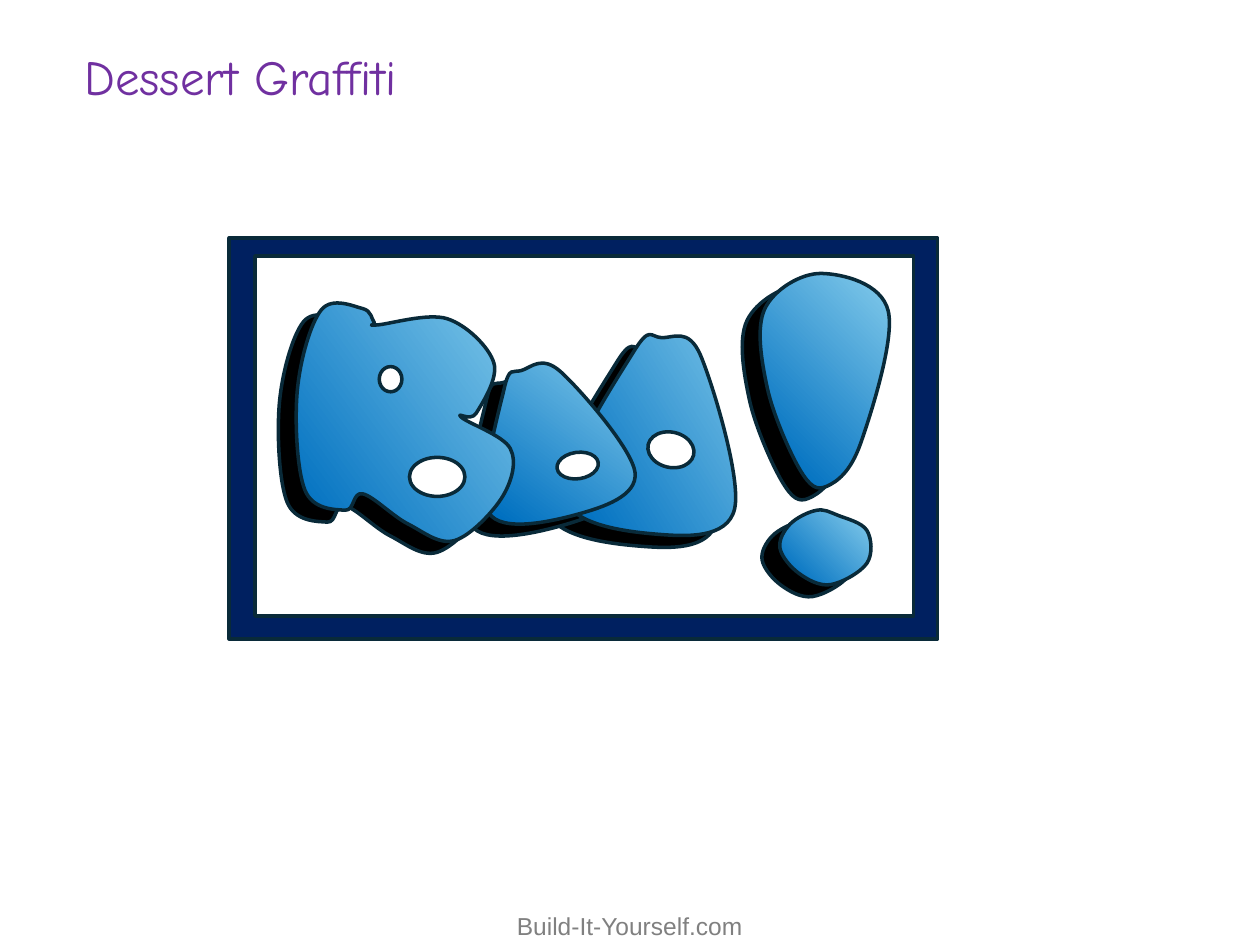
from math import cos, radians, sin

from lxml import etree
from pptx import Presentation
from pptx.dml.color import RGBColor
from pptx.enum.shapes import MSO_SHAPE
from pptx.enum.text import MSO_AUTO_SIZE, PP_ALIGN
from pptx.oxml.ns import qn
from pptx.util import Cm, Pt

RECTANGLE = MSO_SHAPE.RECTANGLE
OVAL = MSO_SHAPE.OVAL
CENTER = PP_ALIGN.CENTER
LEFT = PP_ALIGN.LEFT
FIT_TEXT = MSO_AUTO_SIZE.SHAPE_TO_FIT_TEXT

COLORS = {
    "navy": "002060", "white": "FFFFFF", "black": "000000", "outline": "092A39",
    "deep_blue": "0070C0", "sky_blue": "83CBEB", "purple": "7030A0", "gray": "808080",
}
UNITS_PER_CM = 100 / 2.54

LETTERS = [
    {
        "rotation": 13.1, "hole_rotation": 13.1, "holes": [(314, 143, 37, 28)],
        "anchors": [(303, 79), (325, 68), (356, 82), (383, 204), (322, 224), (248, 193)],
    },
    {
        "rotation": -7.9, "hole_rotation": -7.9, "holes": [(242, 159, 33, 21)],
        "anchors": [(200, 109), (214, 94), (245, 95), (304, 175), (259, 208), (188, 207)],
    },
    {
        "rotation": 8.7, "hole_rotation": 0,
        "holes": [(101, 91, 18, 20), (125, 163, 44, 31)],
        "anchors": [(97, 56), (88, 45), (55, 46), (36, 110), (42, 189), (74, 205),
                    (88, 192), (124, 216), (161, 229), (199, 194), (205, 156),
                    (166, 131), (178, 128), (192, 88), (155, 53), (99, 58)],
    },
    {
        "rotation": 0, "hole_rotation": 0, "holes": [],
        "anchors": [(435, 173), (409, 108), (407, 45), (452, 17), (505, 47),
                    (483, 152), (456, 186)],
    },
    {
        "rotation": 0, "hole_rotation": 0, "holes": [],
        "anchors": [(448, 205), (427, 216), (419, 235), (434, 255), (459, 264),
                    (488, 247), (488, 221), (465, 209)],
    },
]


def rgb(name):
    """Return a named colour."""
    return RGBColor.from_string(COLORS[name])


def paint(shape, color):
    """Fill and outline a shape, with the blue gradient when color is None."""
    shape.shadow.inherit = False
    shape.line.color.rgb = rgb("outline")
    shape.line.width = Pt(2)
    if color:
        shape.fill.solid()
        shape.fill.fore_color.rgb = rgb(color)
        return
    shape.fill.gradient()
    shape.fill.gradient_angle = 45
    stops = zip(shape.fill.gradient_stops, (0.1, 1), ("deep_blue", "sky_blue"))
    for stop, position, name in stops:
        stop.position = position
        stop.color.rgb = rgb(name)


def add_preset(shapes, preset, box, color, rotation=0):
    """Add a painted preset shape in a box given in centimetres."""
    shape = shapes.add_shape(preset, *map(Cm, box))
    shape.rotation = rotation
    paint(shape, color)


def turn(point, degrees):
    """Turn a point clockwise about the corner of the slide."""
    x, y = point
    cosine, sine = cos(radians(degrees)), sin(radians(degrees))
    return round(x * cosine - y * sine), round(x * sine + y * cosine)


def smooth_segments(points):
    """Return the cubic segments of a closed smooth curve through the points."""
    count = len(points)
    segments = []
    for i in range(count):
        before, start, end, after = (points[(i + step) % count] for step in (-1, 0, 1, 2))
        leaving = [s + (e - b) / 6 for b, s, e in zip(before, start, end)]
        arriving = [e - (a - s) / 6 for s, e, a in zip(start, end, after)]
        segments.append((leaving, arriving, end))
    return segments


def add_curve(shapes, letter, left, top, color):
    """Add a closed smooth outline, turned by the letter's rotation."""
    rotation = letter["rotation"]
    points = [turn((Cm(left + x / UNITS_PER_CM), Cm(top + y / UNITS_PER_CM)), -rotation)
              for x, y in letter["anchors"]]
    builder = shapes.build_freeform(*points[0])
    builder.add_line_segments(points[1:])
    shape = builder.convert_to_shape()
    corner_x, corner_y = shape.left, shape.top
    outline = shape.element.xpath(".//a:path")[0]
    for child in list(outline)[1:]:
        outline.remove(child)
    for segment in smooth_segments(points):
        curve = etree.SubElement(outline, qn("a:cubicBezTo"))
        for x, y in segment:
            etree.SubElement(curve, qn("a:pt"),
                             x=str(round(x - corner_x)), y=str(round(y - corner_y)))
    etree.SubElement(outline, qn("a:close"))
    half_width, half_height = shape.width // 2, shape.height // 2
    center_x, center_y = turn((corner_x + half_width, corner_y + half_height), rotation)
    shape.left, shape.top = center_x - half_width, center_y - half_height
    shape.rotation = rotation
    paint(shape, color)


def add_word(slide, left, top, letter_color, hole_color):
    """Add one layer of the graffiti word as a group."""
    shapes = slide.shapes.add_group_shape().shapes
    for letter in LETTERS:
        add_curve(shapes, letter, left, top, letter_color)
        for hole in letter["holes"]:
            x, y, width, height = (value / UNITS_PER_CM for value in hole)
            add_preset(shapes, OVAL, (left + x, top + y, width, height), hole_color,
                       letter["hole_rotation"])


def add_frame(slide, left, top, width, height):
    """Add the navy border and its white panel."""
    add_preset(slide.shapes, RECTANGLE, (left, top, width, height), "navy")
    panel = (left + 0.52, top + 0.36, width - 1, height - 0.82)
    add_preset(slide.shapes, RECTANGLE, panel, "white")


def add_text(slide, box, text, font, size, color, alignment, wrap):
    """Add a single line of text."""
    frame = slide.shapes.add_textbox(*map(Cm, box)).text_frame
    frame.word_wrap = wrap
    frame.auto_size = FIT_TEXT
    paragraph = frame.paragraphs[0]
    paragraph.alignment = alignment
    run = paragraph.add_run()
    run.text = text
    run.font.name = font
    run.font.size = Pt(size)
    run.font.color.rgb = rgb(color)


def main():
    """Build and save the slide."""
    presentation = Presentation()
    presentation.slide_width, presentation.slide_height = Cm(25.4), Cm(19.05)
    slide = presentation.slides.add_slide(presentation.slide_layouts[6])
    add_frame(slide, 4.62, 4.8, 14.28, 8.08)
    add_word(slide, 4.72, 5.32, "black", "black")
    add_word(slide, 5.08, 5.08, None, "white")
    add_text(slide, (10.13, 18.24, 5.13, 0.86), "Build-It-Yourself.com",
             "Arial", 14, "gray", CENTER, False)
    add_text(slide, (1.45, 0.81, 10.9, 1.45), "Dessert Graffiti",
             "Comic Neue", 28, "purple", LEFT, True)
    presentation.save("out.pptx")


if __name__ == "__main__":
    main()
